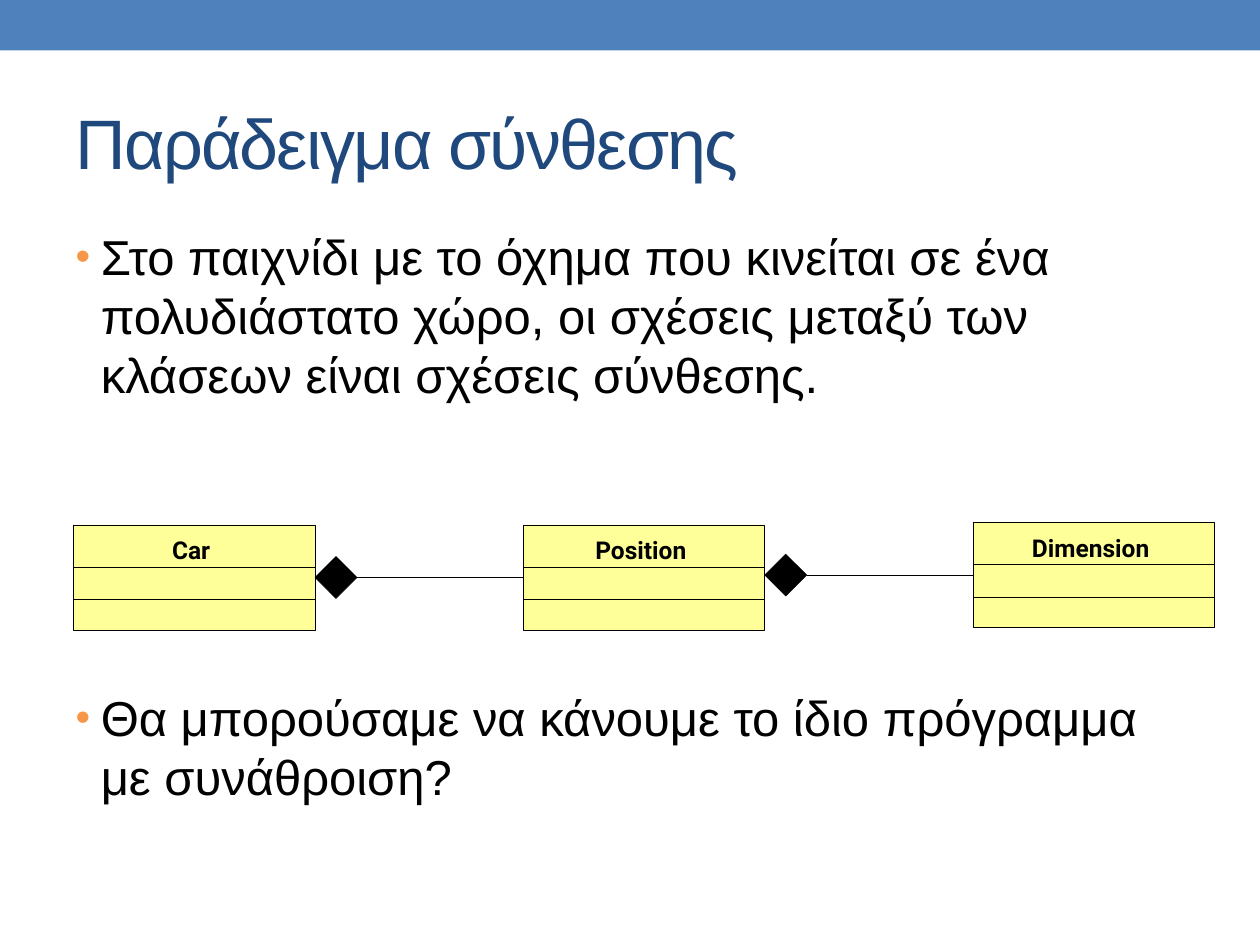
"""Build a slide on composition between the Car, Position and Dimension classes."""
from dataclasses import dataclass

from lxml import etree
from pptx import Presentation
from pptx.dml.color import RGBColor
from pptx.enum import shapes, text
from pptx.oxml.ns import qn
from pptx.util import Pt

TITLE = "Παράδειγμα σύνθεσης"
POINTS = [
    ("Στο παιχνίδι με το όχημα που κινείται σε ένα πολυδιάστατο χώρο, "
     "οι σχέσεις μεταξύ των κλάσεων είναι σχέσεις σύνθεσης.", 5.6),
    ("Θα μπορούσαμε να κάνουμε το ίδιο πρόγραμμα με συνάθροιση?", 162.3),
]
CLASSES = [("Car", 300), ("Position", 300), ("Dimension", 298.6)]


@dataclass(frozen=True)
class Theme:
    bar: str = "4F81BD"
    title: str = "1F497D"
    bullet: str = "F79646"
    class_fill: str = "FFFF99"
    ink: str = "000000"
    text_font: str = "Arial"
    class_font: str = "Roboto"
    title_size: float = 40
    body_size: float = 28
    class_size: float = 14
    body_leading: float = 33.7
    hairline: float = 0.25


THEME = Theme()
CLASS_LEFT, CLASS_PITCH, CLASS_WIDTH, CLASS_HEIGHT = 42, 257, 138, 60
DIVIDERS = (24, 42.5)
DIAMOND = 24


def place(part, left, top, width, height):
    part.left, part.top, part.width, part.height = map(Pt, (left, top, width, height))


def style_text(paragraph, font, size, color, bold=False):
    for run in paragraph.runs:
        run.font.name, run.font.size, run.font.bold = font, Pt(size), bold
        run.font.color.rgb = RGBColor.from_string(color)


def add_solid(parent, kind, box, fill, line=None):
    solid = parent.add_shape(kind, *map(Pt, box))
    solid.shadow.inherit = False
    solid.fill.solid()
    solid.fill.fore_color.rgb = RGBColor.from_string(fill)
    if line:
        solid.line.color.rgb = RGBColor.from_string(line)
        solid.line.width = Pt(THEME.hairline)
    else:
        solid.line.fill.background()
    return solid


def add_rule(parent, start, end):
    rule = parent.add_connector(shapes.MSO_CONNECTOR.STRAIGHT, *map(Pt, (*start, *end)))
    rule.line.color.rgb = RGBColor.from_string(THEME.ink)
    rule.line.width = Pt(THEME.hairline)
    etree.SubElement(rule._element.spPr, qn("a:effectLst"))
    return rule


def add_bullet(paragraph):
    properties = paragraph._p.get_or_add_pPr()
    properties.set("marL", str(Pt(14.4)))
    properties.set("indent", str(Pt(-14.4)))
    color = etree.SubElement(properties, qn("a:buClr"))
    etree.SubElement(color, qn("a:srgbClr"), val=THEME.bullet)
    etree.SubElement(properties, qn("a:buSzPct"), val="85000")
    etree.SubElement(properties, qn("a:buFont"), typeface=THEME.text_font)
    etree.SubElement(properties, qn("a:buChar"), char="•")


def fill_title(title):
    place(title, 36, 42, 648, 78)
    frame = title.text_frame
    frame.text = TITLE
    frame.auto_size = text.MSO_AUTO_SIZE.NONE
    frame.vertical_anchor = text.MSO_ANCHOR.MIDDLE
    heading = frame.paragraphs[0]
    heading.alignment = text.PP_ALIGN.LEFT
    style_text(heading, THEME.text_font, THEME.title_size, THEME.title)
    heading.runs[0].font._element.set("spc", "-100")


def fill_body(body):
    place(body, 36, 126, 648, 384)
    frame = body.text_frame
    frame.text = "\n".join(wording for wording, _ in POINTS)
    frame.auto_size = text.MSO_AUTO_SIZE.NONE
    frame.vertical_anchor = text.MSO_ANCHOR.TOP
    for point, (_, gap) in zip(frame.paragraphs, POINTS):
        point.space_before = Pt(gap)
        point.line_spacing = Pt(THEME.body_leading)
        add_bullet(point)
        style_text(point, THEME.text_font, THEME.body_size, THEME.ink)


def add_class(slide, name, left, top):
    members = slide.shapes.add_group_shape().shapes
    outline = add_solid(members, shapes.MSO_SHAPE.RECTANGLE,
                        (left, top, CLASS_WIDTH, CLASS_HEIGHT), THEME.class_fill, THEME.ink)
    label = members.add_textbox(*map(Pt, (left + 5, top + 2.2, 124.5, 24.5)))
    label.text_frame.word_wrap = True
    label.text_frame.text = name
    caption = label.text_frame.paragraphs[0]
    caption.alignment = text.PP_ALIGN.CENTER
    style_text(caption, THEME.class_font, THEME.class_size, THEME.ink, bold=True)
    for offset in DIVIDERS:
        add_rule(members, (left, top + offset), (left + CLASS_WIDTH, top + offset))
    return outline


def add_composition(slide, owner_left, part_left, part_top, part_outline):
    middle = part_top + CLASS_HEIGHT / 2
    diamond_left = owner_left + CLASS_WIDTH
    diamond = add_solid(slide.shapes, shapes.MSO_SHAPE.DIAMOND,
                        (diamond_left, middle - DIAMOND / 2, DIAMOND, DIAMOND),
                        THEME.ink, THEME.ink)
    link = add_rule(slide.shapes, (diamond_left + DIAMOND, middle), (part_left, middle))
    link.begin_connect(diamond, 3)
    link.end_connect(part_outline, 1)


def main():
    deck = Presentation()
    deck.slide_width, deck.slide_height = Pt(720), Pt(540)
    slide = deck.slides.add_slide(deck.slide_layouts[1])
    add_solid(slide.shapes, shapes.MSO_SHAPE.RECTANGLE, (0, 0, 720, 28.8), THEME.bar)
    fill_title(slide.shapes.title)
    fill_body(slide.placeholders[1])
    for index, (name, top) in enumerate(CLASSES):
        left = CLASS_LEFT + index * CLASS_PITCH
        outline = add_class(slide, name, left, top)
        if index:
            add_composition(slide, left - CLASS_PITCH, left, top, outline)
    deck.save("out.pptx")


if __name__ == "__main__":
    main()
